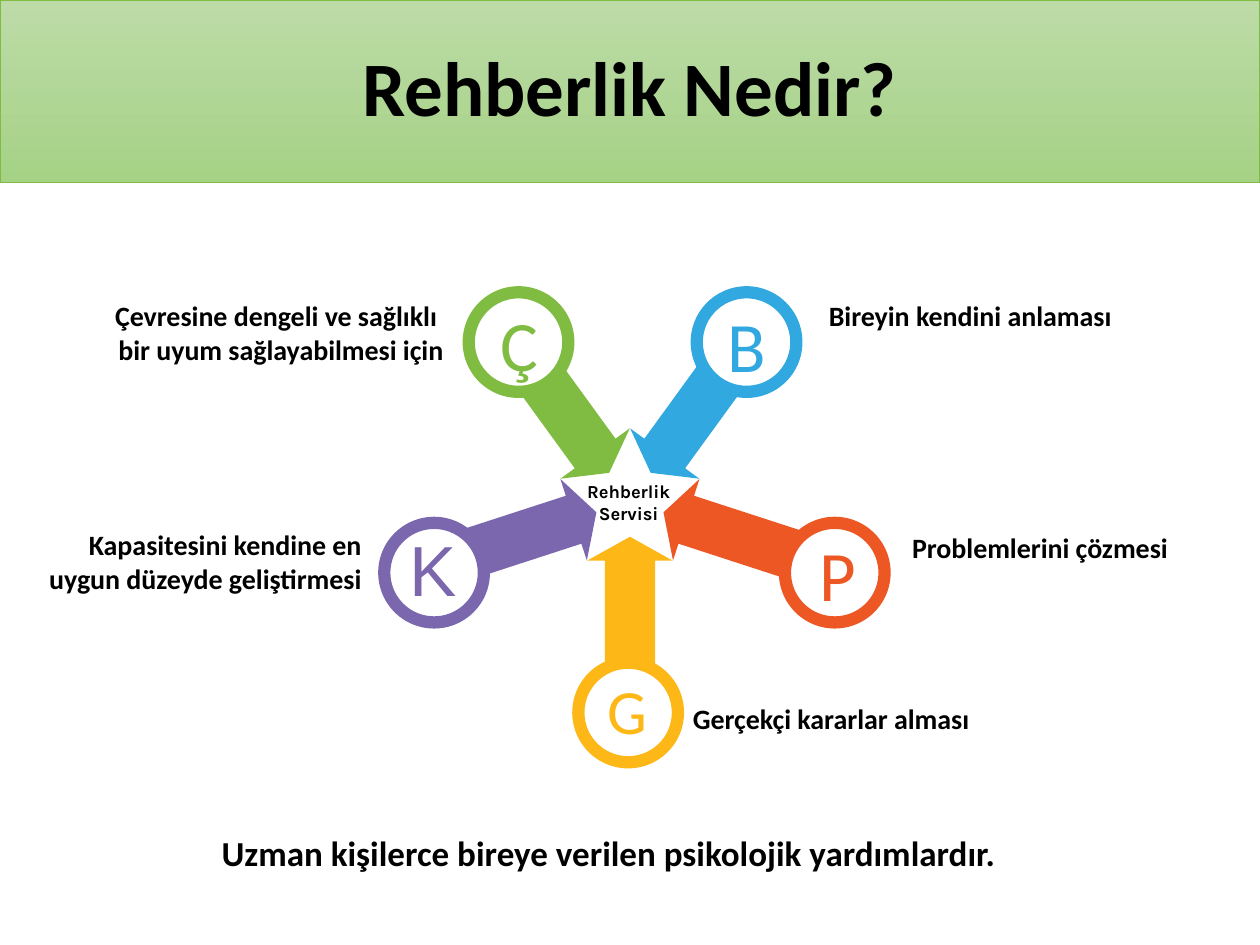
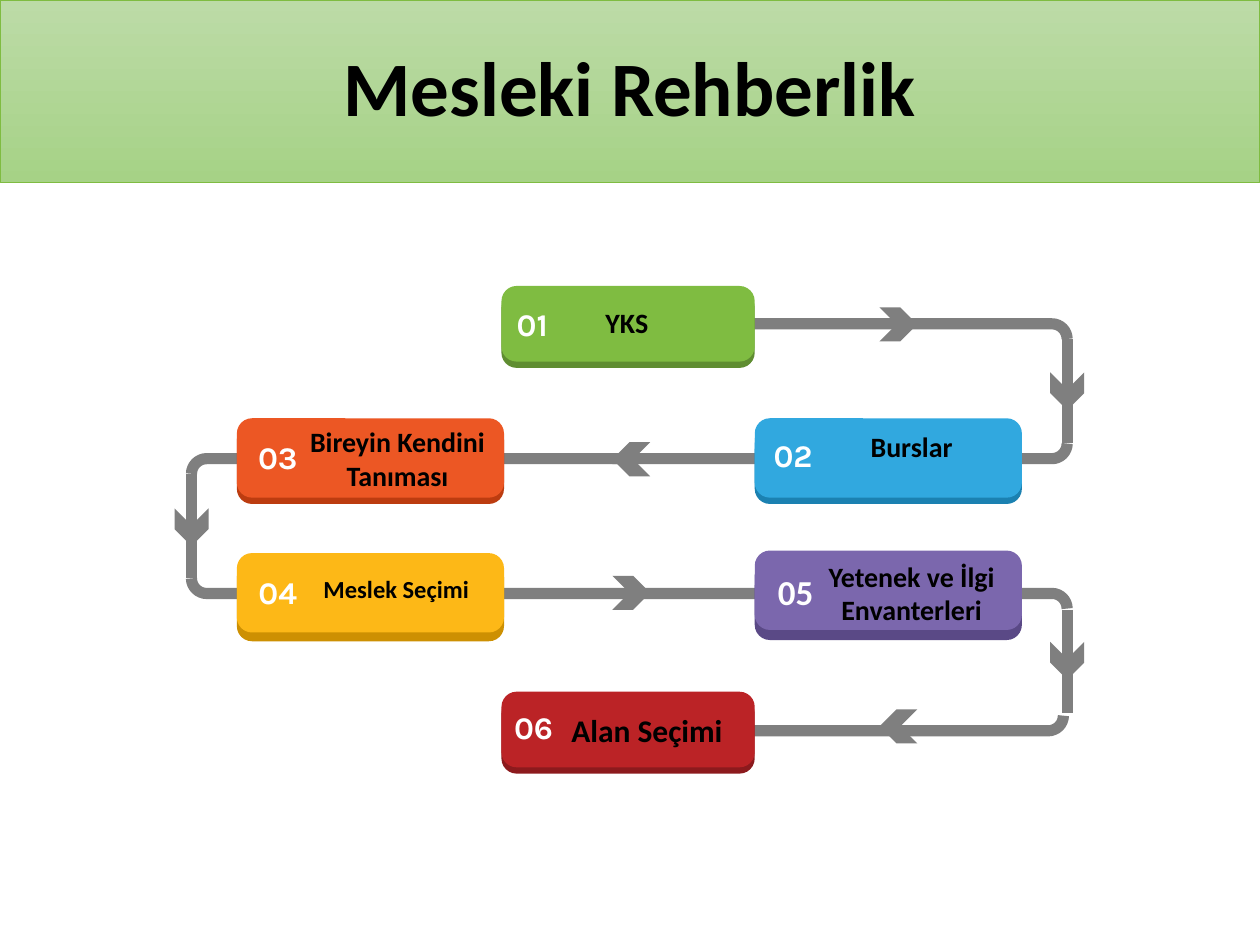
from math import cos, pi, radians, sin
from pptx import Presentation
from pptx.dml.color import RGBColor
from pptx.enum.shapes import MSO_CONNECTOR, MSO_SHAPE
from pptx.enum.text import MSO_ANCHOR, MSO_AUTO_SIZE, PP_ALIGN
from pptx.oxml.ns import qn
from pptx.util import Inches, Pt

# Grid: 10 columns by 7.5 rows of square cells
COLS, ROWS = 10, 7.5
CELL = Inches(1)

BLACK = RGBColor(0x00, 0x00, 0x00)
WHITE = RGBColor(0xFF, 0xFF, 0xFF)
GRAY = RGBColor(0x7F, 0x7F, 0x7F)
GREEN = RGBColor(0x7F, 0xBC, 0x41)
BLUE = RGBColor(0x31, 0xA8, 0xDF)
ORANGE = RGBColor(0xEC, 0x57, 0x24)
YELLOW = RGBColor(0xFD, 0xB8, 0x17)
PURPLE = RGBColor(0x7B, 0x67, 0xAD)
RED = RGBColor(0xBB, 0x23, 0x26)
DARK_GREEN = RGBColor(0x5F, 0x8D, 0x31)
DARK_BLUE = RGBColor(0x1B, 0x81, 0xB1)
DARK_ORANGE = RGBColor(0xBC, 0x3C, 0x10)
DARK_YELLOW = RGBColor(0xCD, 0x90, 0x02)
DARK_PURPLE = RGBColor(0x5A, 0x49, 0x86)
DARK_RED = RGBColor(0x8C, 0x1A, 0x1D)
BAND_TOP = RGBColor(0xBC, 0xDB, 0xA7)
BAND_END = RGBColor(0xA6, 0xD2, 0x86)

BODY, ACCENT, LETTER = "Calibri", "Karla", "Arial"
LEFT, MID, RIGHT = PP_ALIGN.LEFT, PP_ALIGN.CENTER, PP_ALIGN.RIGHT

RAIL = 6.38   # rail width in points
BEND = 0.12   # radius of rail bends and card corners
RING = 0.79   # ring diameter
HUB = (5, 3.98)
# Half of an arrow, as (side, distance from the hub)
ARROW = [(0, 0.28), (0.34, 0.47), (0.2, 0.47), (0.2, 1.59)]


def grid(*cells):
    return [int(n * CELL) for n in cells]


def paint(shape, fill=None, line=None, width=1):
    shape.shadow.inherit = False
    if fill is None:
        shape.fill.background()
    else:
        shape.fill.solid()
        shape.fill.fore_color.rgb = fill
    if line is None:
        shape.line.fill.background()
    else:
        shape.line.color.rgb = line
        shape.line.width = Pt(width)
    return shape


def write(shape, text, size=16, font=BODY, color=BLACK, bold=True, align=MID,
          anchor=MSO_ANCHOR.TOP, wrap=True, inset=None, space=None):
    frame = shape.text_frame
    frame.word_wrap = wrap
    frame.vertical_anchor = anchor
    if inset is not None:
        frame.margin_left = frame.margin_right = inset
        frame.margin_top = frame.margin_bottom = inset
    frame.text = text
    for para in frame.paragraphs:
        para.alignment = align
        para.line_spacing = space
        style = para.runs[0].font
        style.name, style.size, style.bold = font, Pt(size), bold
        style.color.rgb = color


def label(slide, text, box, **form):
    area = slide.shapes.add_textbox(*grid(*box))
    write(area, text, **form)
    if "inset" not in form:
        area.text_frame.auto_size = MSO_AUTO_SIZE.SHAPE_TO_FIT_TEXT


def outline(slide, points, close, **look):
    first, *rest = [grid(*point) for point in points]
    pen = slide.shapes.build_freeform(*first, scale=1.0)
    pen.add_line_segments(rest, close=close)
    paint(pen.convert_to_shape(), **look)


def band(slide, title):
    bar = slide.shapes.add_shape(MSO_SHAPE.RECTANGLE, *grid(0, 0, COLS, 1.45))
    paint(bar, line=GREEN, width=0.5)
    bar.fill.gradient()
    bar.fill.gradient_angle = 270
    for stop, color in zip(bar.fill.gradient_stops, (BAND_TOP, BAND_END)):
        stop.color.rgb = color
    write(bar, title, size=44, anchor=MSO_ANCHOR.MIDDLE, space=0.9)


def arrow(slide, angle, color):
    turn = radians(angle)
    mirror = [(-side, far) for side, far in reversed(ARROW[1:])]
    points = [(HUB[0] + side * cos(turn) + far * sin(turn),
               HUB[1] - side * sin(turn) + far * cos(turn))
              for side, far in ARROW + mirror]
    outline(slide, points, True, fill=color)


def ring(slide, text, left, top, color, nudge, size=40.5, font=BODY):
    disc = slide.shapes.add_shape(MSO_SHAPE.OVAL, *grid(left, top, RING, RING))
    paint(disc, fill=WHITE, line=color, width=7)
    box = (left + nudge[0], top + nudge[1], 0.38, 0.38)
    label(slide, text, box, size=size, font=font, color=color, bold=False,
          anchor=MSO_ANCHOR.MIDDLE, wrap=False, inset=0)


def rail(slide, start, turn, y, down):
    """Level run from start, with a round bend that ends at column turn."""
    side = 1 if turn > start else -1
    sweep = [pi / 2 * step / 8 for step in range(9)]
    curve = [(turn - side * BEND * (1 - sin(a)), y + down * BEND * (1 - cos(a)))
             for a in sweep]
    outline(slide, [(start, y)] + curve, False, line=GRAY, width=RAIL)


def drop(slide, x, top, end):
    line = slide.shapes.add_connector(MSO_CONNECTOR.STRAIGHT,
                                      *grid(x, top, x, end))
    line.line.color.rgb = GRAY
    line.line.width = Pt(RAIL)
    props = line._element.spPr
    props.append(props.makeelement(qn("a:effectLst"), {}))


def mark(slide, left, top, turn):
    tip = slide.shapes.add_shape(MSO_SHAPE.CHEVRON, *grid(left, top, 0.3, 0.27))
    paint(tip, fill=GRAY).rotation = turn


def card(slide, left, top, size, depth, colors):
    wide, high = size
    for shift, color in zip((depth, 0), colors):
        box = grid(left, top + shift, wide, high)
        face = slide.shapes.add_shape(MSO_SHAPE.ROUNDED_RECTANGLE, *box)
        face.adjustments[0] = BEND / high
        paint(face, fill=color)


def guide(slide):
    band(slide, "Rehberlik Nedir?")
    # Five arrows around the hub
    for turn, color in enumerate((YELLOW, ORANGE, BLUE, GREEN, PURPLE)):
        arrow(slide, turn * 360 / 5, color)
    label(slide, "Rehberlik\nServisi", (4.55, 3.76, 0.88, 0.45),
          size=10.5, font=ACCENT, wrap=False)

    # Notes beside the rings
    for text, box, align, wrap in (
        ("Bireyin kendini anlaması", (6.48, 2.32, 2.47, 0.37), LEFT, False),
        ("Problemlerini çözmesi", (7.14, 4.16, 2.26, 0.37), LEFT, False),
        ("Gerçekçi kararlar alması", (5.4, 5.52, 2.42, 0.37), LEFT, False),
        ("Kapasitesini kendine en uygun düzeyde geliştirmesi",
         (0.24, 4.14, 2.73, 0.64), RIGHT, True),
        ("Çevresine dengeli ve sağlıklı \nbir uyum sağlayabilmesi için",
         (0.73, 2.32, 2.89, 0.64), RIGHT, False),
    ):
        label(slide, text, box, align=align, wrap=wrap)

    # Lettered rings
    ring(slide, "Ç", 3.72, 2.32, GREEN, (0.21, 0.21))
    ring(slide, "B", 5.53, 2.32, BLUE, (0.21, 0.22))
    ring(slide, "P", 6.23, 4.15, ORANGE, (0.23, 0.21))
    ring(slide, "G", 4.59, 5.26, YELLOW, (0.2, 0.18), size=36)
    ring(slide, "K", 3.05, 4.15, PURPLE, (0.2, 0.17), font=LETTER)

    label(slide, "Uzman kişilerce bireye verilen psikolojik yardımlardır.",
          (1.66, 6.55, 7.55, 0.44), size=20, align=LEFT)


def career(slide):
    # Rails: start, bend column, row, bend direction
    for run in ((4.87, 8.44, 5.8, -1), (6.61, 8.47, 4.71, 1),
                (4.86, 8.47, 3.64, -1), (5.21, 8.47, 2.57, 1),
                (7.95, 1.52, 4.71, -1), (4.9, 1.52, 3.64, 1)):
        rail(slide, *run)
    for run in ((8.47, 2.69, 3.52), (1.52, 3.76, 4.59), (8.47, 4.84, 5.66)):
        drop(slide, *run)
    for spot in ((6.98, 2.44, 0), (8.32, 2.97, 90), (4.86, 3.51, 180),
                 (1.37, 4.05, 90), (8.32, 5.11, 90), (4.86, 4.57, 0),
                 (6.98, 5.63, 180)):
        mark(slide, *spot)
    band(slide, "Mesleki Rehberlik")

    # Cards: left, top, size, depth, colours
    small, large = (2.01, 0.6), (2.12, 0.63)
    for step in (
        (3.98, 2.27, small, 0.05, (DARK_GREEN, GREEN)),
        (5.99, 3.32, large, 0.05, (DARK_BLUE, BLUE)),
        (1.88, 3.32, large, 0.05, (DARK_ORANGE, ORANGE)),
        (1.88, 4.39, large, 0.07, (DARK_YELLOW, YELLOW)),
        (5.99, 4.37, large, 0.08, (DARK_PURPLE, PURPLE)),
        (3.98, 5.49, small, 0.05, (DARK_RED, RED)),
    ):
        card(slide, *step)

    # Step numbers
    for count, spot in enumerate(((3.96, 2.37), (6.03, 3.41), (1.94, 3.43),
                                  (1.94, 4.5), (6.05, 4.48), (3.97, 5.57)), 1):
        size, font = (20, BODY) if count == 5 else (18, ACCENT)
        label(slide, f"{count:02}", (*spot, 0.53, 0.4), size=size, font=font,
              color=WHITE)

    # Step names
    for text, box, size in (
        ("YKS", (4.22, 2.38, 1.51, 0.37), 16),
        ("Burslar", (6.48, 3.36, 1.51, 0.37), 16),
        ("Bireyin Kendini\nTanıması", (2.35, 3.32, 1.61, 0.64), 16),
        ("Meslek Seçimi", (2.39, 4.51, 1.51, 0.34), 14),
        ("Yetenek ve İlgi Envanterleri", (6.39, 4.39, 1.69, 0.64), 16),
        ("Alan Seçimi", (4.43, 5.59, 1.41, 0.4), 18),
    ):
        label(slide, text, box, size=size, wrap=text != "Alan Seçimi")


def main():
    deck = Presentation()
    deck.slide_width, deck.slide_height = grid(COLS, ROWS)
    for build in (guide, career):
        build(deck.slides.add_slide(deck.slide_layouts[6]))
    deck.save("out.pptx")


if __name__ == "__main__":
    main()
